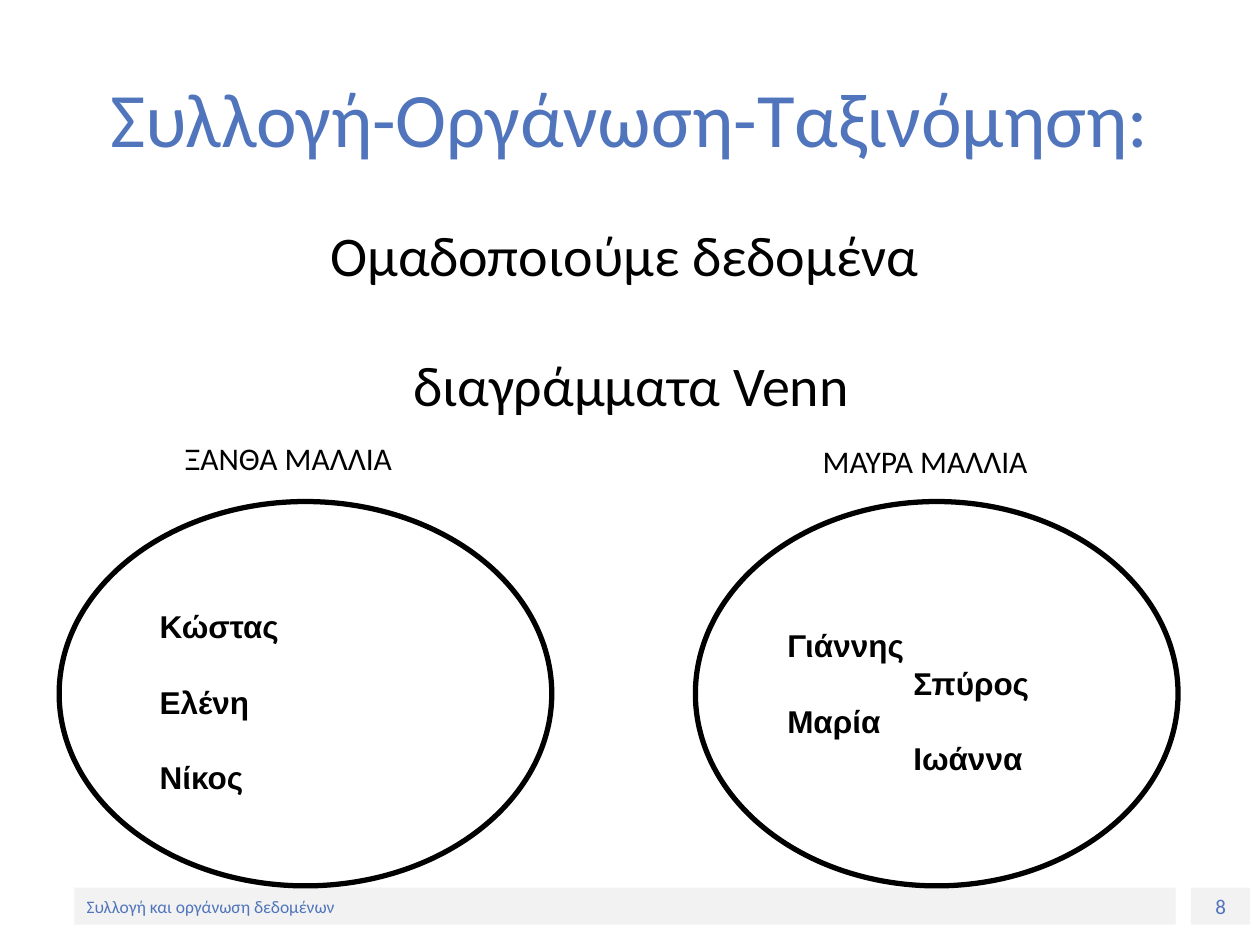
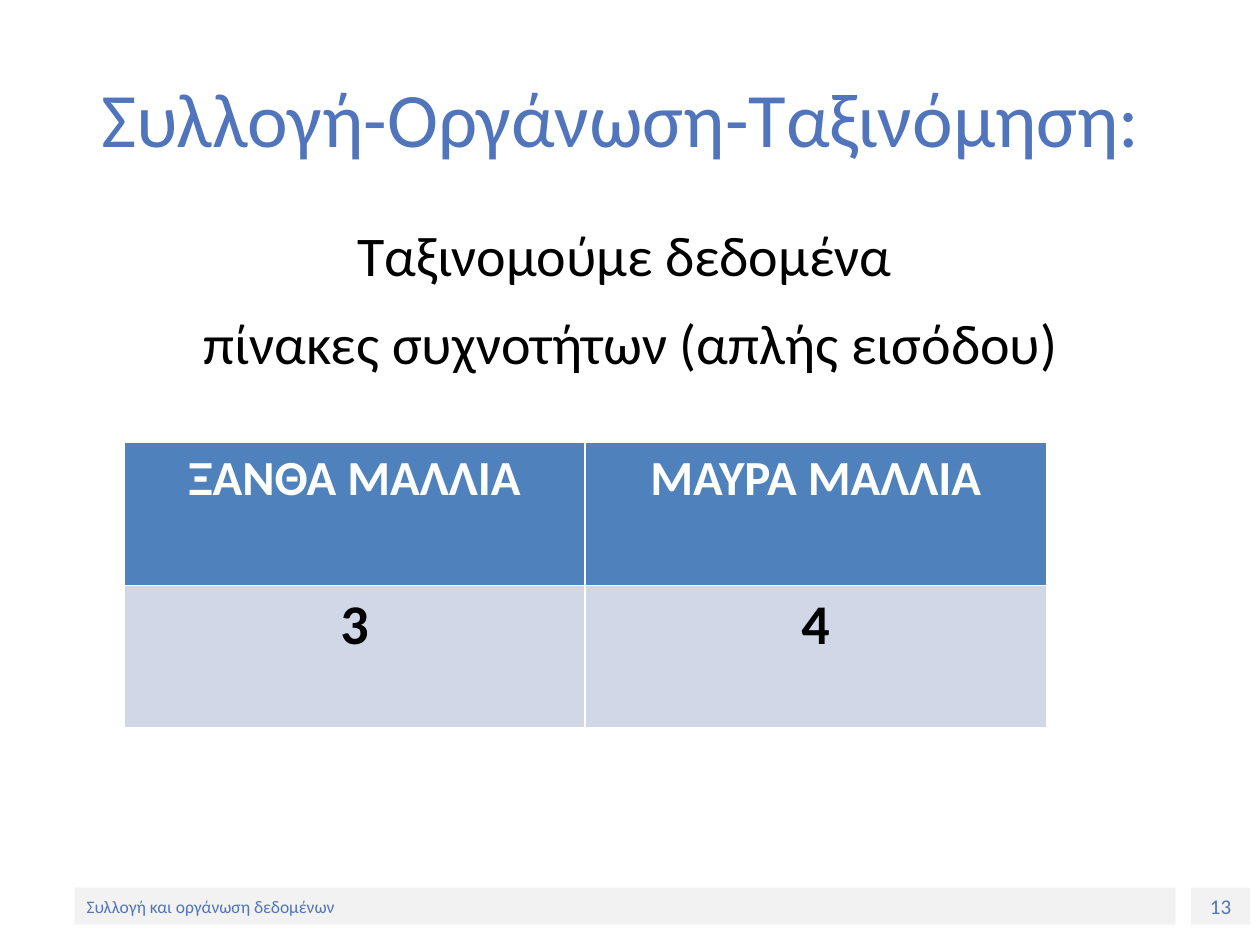
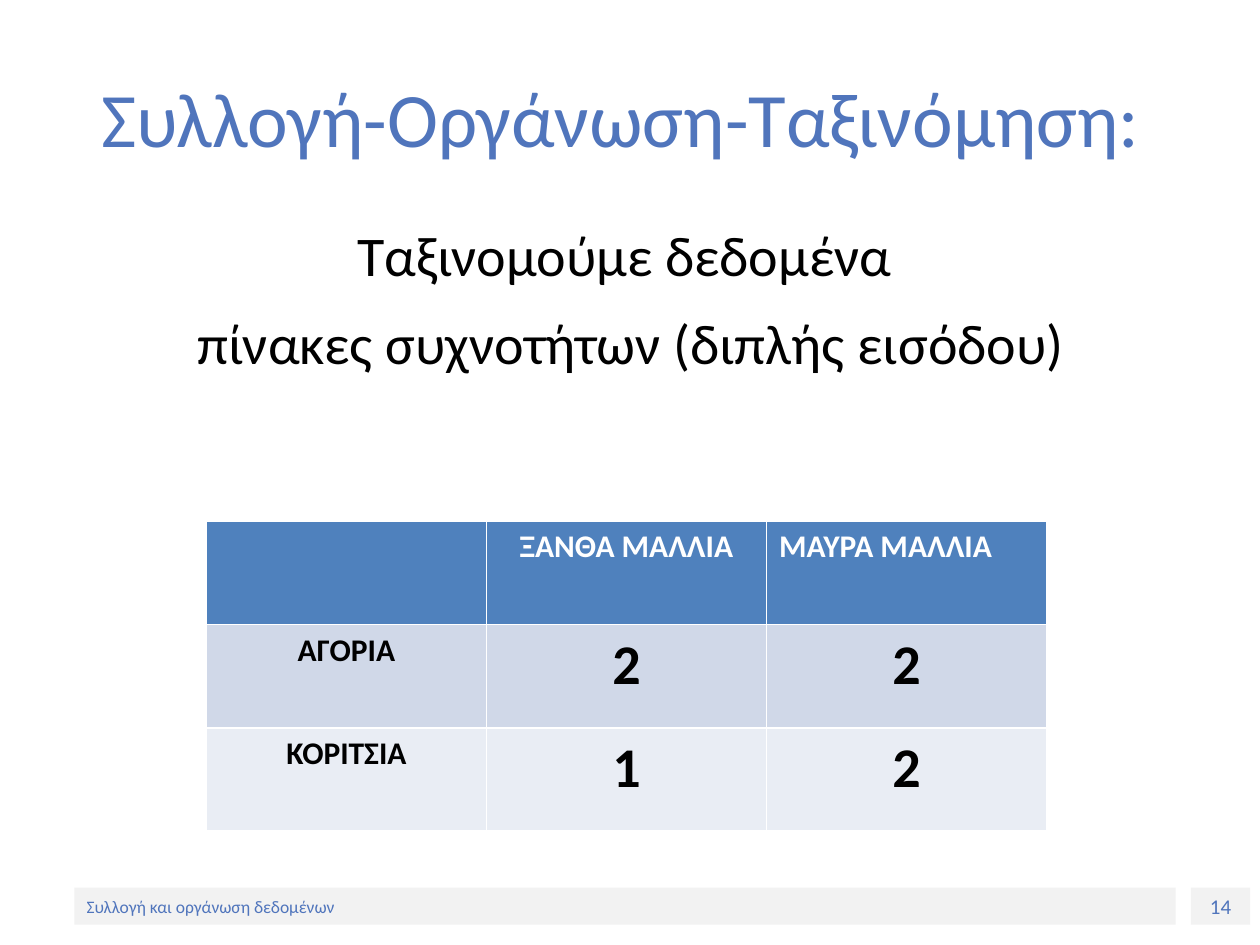
from dataclasses import dataclass

from lxml.etree import SubElement
from pptx import Presentation
from pptx.dml.color import RGBColor as RGB
from pptx.enum.shapes import MSO_SHAPE as SHAPE
from pptx.enum.text import MSO_ANCHOR as ANCHOR, PP_ALIGN as ALIGN
from pptx.oxml.ns import qn
from pptx.util import Pt


@dataclass(frozen=True)
class Theme:
    accent: str = "5075BC"
    band: str = "F2F2F2"
    ink: str = "000000"
    white: str = "FFFFFF"
    header: str = "4F81BD"
    rows: tuple = ("D0D8E8", "E9EDF4")
    font: str = "Calibri"
    names_font: str = "Arial"
    title: int = 44
    body: int = 32
    table_head: int = 28
    label: int = 18
    number: int = 12
    footer: int = 10
    names_line: float = 21.6
    names_tab: int = 72


T = Theme()
TITLE = "Συλλογή-Οργάνωση-Ταξινόμηση:"
FOOTER = "Συλλογή και οργάνωση δεδομένων"
TITLE_BOX = (36, 21.6, 648, 90)
BODY_BOX = (36.7, 122.4, 648, 356.4)
FOOTER_BOX = (42.5, 507.2, 629.3, 21.2)
NUMBER_BOX = (680.6, 507.2, 33.8, 21.2)
BLOND, BLACK = "ΞΑΝΘΑ ΜΑΛΛΙΑ", "ΜΑΥΡΑ ΜΑΛΛΙΑ"


def points(box):
    return [Pt(v) for v in box]


def write(tf, lines, size, color=T.ink, align=ALIGN.LEFT, font=T.font, bold=False):
    tf.text = "\n".join(lines)
    for p in tf.paragraphs:
        p.alignment = align
        for r in p.runs:
            r.font.name, r.font.size, r.font.bold = font, Pt(size), bold
            r.font.color.rgb = RGB.from_string(color)


def add_text(s, box, lines, size, anchor=ANCHOR.TOP, **style):
    tf = s.shapes.add_textbox(*points(box)).text_frame
    tf.word_wrap, tf.vertical_anchor = True, anchor
    write(tf, lines, size, **style)
    return tf


def add_band(s, box, text, size, anchor, align):
    sp = s.shapes.add_shape(SHAPE.RECTANGLE, *points(box))
    sp.shadow.inherit = False
    sp.fill.solid()
    sp.fill.fore_color.rgb = RGB.from_string(T.band)
    sp.line.fill.background()
    sp.text_frame.vertical_anchor = anchor
    write(sp.text_frame, [text], size, T.accent, align)


def add_base(prs, number, title, body, after=0):
    s = prs.slides.add_slide(prs.slide_layouts[6])
    add_band(s, NUMBER_BOX, str(number), T.number, ANCHOR.TOP, ALIGN.CENTER)
    add_band(s, FOOTER_BOX, FOOTER, T.footer, ANCHOR.MIDDLE, ALIGN.LEFT)
    add_text(s, TITLE_BOX, [title], T.title, ANCHOR.MIDDLE,
             color=T.accent, align=ALIGN.CENTER)
    tf = add_text(s, BODY_BOX, body, T.body, align=ALIGN.CENTER)
    for i, p in enumerate(tf.paragraphs):
        p.space_before, p.space_after = Pt(12 if i else 0), Pt(after)
    return s


def set_tab(p, position):
    tabs = SubElement(p._p.get_or_add_pPr(), qn("a:tabLst"))
    SubElement(tabs, qn("a:tab"), pos=str(Pt(position)), algn="l")


def add_venn_set(s, box, label, label_at, names, names_box, gap=0):
    x, y = box[:2]
    add_text(s, (x + label_at[0], y + label_at[1], 144, 72), [label], T.label,
             ANCHOR.MIDDLE)
    sp = s.shapes.add_shape(SHAPE.OVAL, *points(box))
    sp.shadow.inherit = False
    sp.fill.background()
    sp.line.color.rgb = RGB.from_string(T.ink)
    sp.line.width = Pt(3)
    dx, dy, w, h = names_box
    tf = add_text(s, (x + dx, y + dy, w, h), names, T.label,
                  font=T.names_font, bold=True)
    for i, p in enumerate(tf.paragraphs):
        set_tab(p, T.names_tab)
        p.line_spacing = Pt(T.names_line)
        p.space_before = Pt(gap if i else 0)


def set_borders(cell):
    tc_pr = cell._tc.get_or_add_tcPr()
    for side in "LRTB":
        ln = SubElement(tc_pr, qn(f"a:ln{side}"), w=str(Pt(1)))
        fill = SubElement(ln, qn("a:solidFill"))
        SubElement(fill, qn("a:srgbClr"), val=T.white)


def add_frequency_table(s, box, rows, head_size, head_aligns):
    table = s.shapes.add_table(len(rows), len(rows[0]), *points(box)).table
    for i, row in enumerate(rows):
        table.rows[i].height = Pt(box[3] / len(rows))
        for j, text in enumerate(row):
            cell = table.cell(i, j)
            set_borders(cell)
            cell.fill.solid()
            cell.fill.fore_color.rgb = RGB.from_string(T.rows[i - 1] if i else T.header)
            size = T.body if text.isdigit() else head_size
            write(cell.text_frame, [text], size, T.ink if i else T.white,
                  ALIGN.CENTER if i else head_aligns[j], bold=True)


def venn_slide(prs):
    s = add_base(prs, 8, TITLE, ["Ομαδοποιούμε δεδομένα ", "διαγράμματα Venn"], 24)
    add_venn_set(s, (33.8, 286.6, 281.5, 219.6), BLOND, (64.8, -61.2),
                 ["Κώστας", "Ελένη", "Νίκος"], (50.4, 56.8, 174.2, 116.6),
                 gap=T.names_line)
    add_venn_set(s, (397.4, 286.6, 275.8, 219.6), BLACK, (65.6, -59.1),
                 ["Γιάννης", "\tΣπύρος", "Μαρία", "\tΙωάννα"],
                 (45.4, 67.6, 185.8, 94.3))


def table_slide(prs, number, kind, box, rows, head_size, head_aligns):
    body = ["Ταξινομούμε δεδομένα ", f"πίνακες συχνοτήτων ({kind} εισόδου)"]
    s = add_base(prs, number, TITLE + " ", body)
    add_frequency_table(s, box, rows, head_size, head_aligns)


def main():
    prs = Presentation()
    prs.slide_width, prs.slide_height = Pt(720), Pt(540)
    venn_slide(prs)
    table_slide(prs, 13, "απλής", (70.9, 252.9, 527, 163.2),
                [[BLOND, BLACK], ["3", "4"]],
                T.table_head, [ALIGN.CENTER] * 2)
    table_slide(prs, 14, "διπλής", (118, 298, 480, 177),
                [["", BLOND, BLACK], ["ΑΓΟΡΙΑ", "2", "2"], ["ΚΟΡΙΤΣΙΑ", "1", "2"]],
                T.label, [ALIGN.CENTER, ALIGN.CENTER, ALIGN.LEFT])
    prs.save("out.pptx")


if __name__ == "__main__":
    main()
